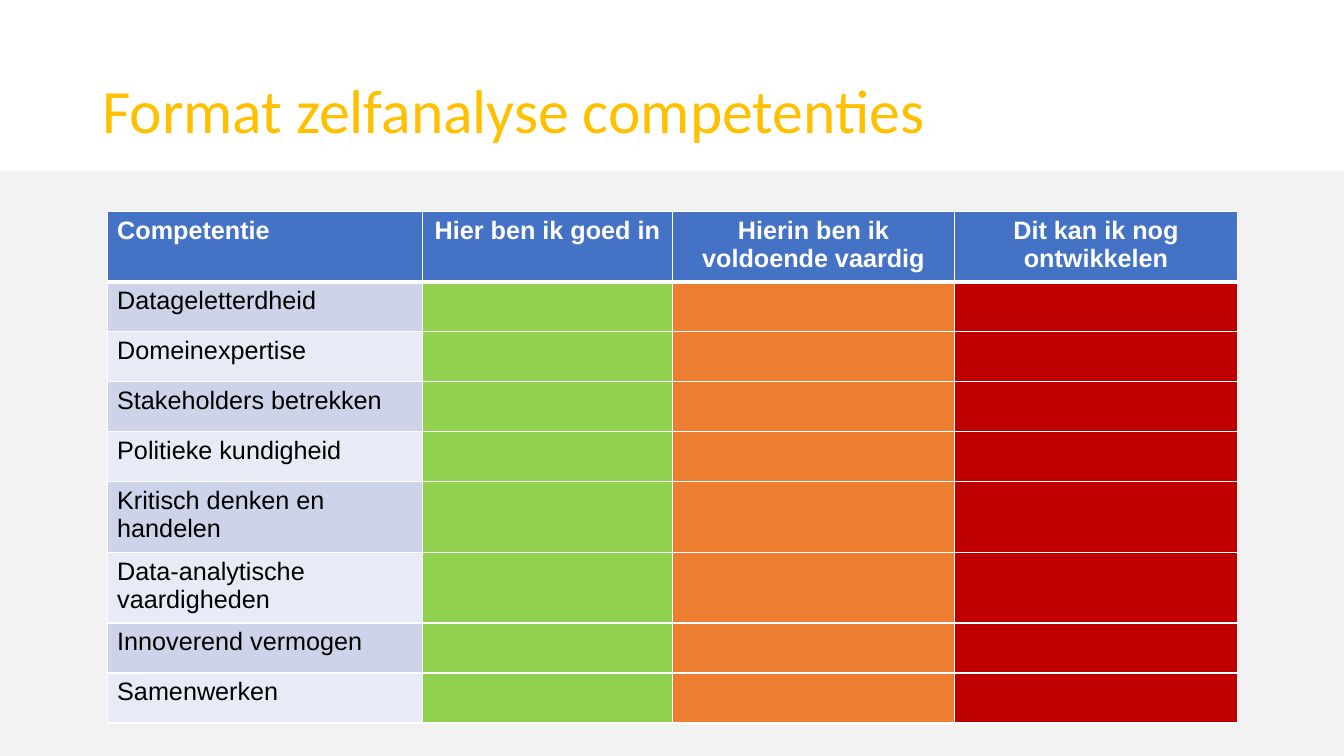
from lxml import etree
from pptx import Presentation
from pptx import util as u
from pptx.dml.color import RGBColor
from pptx.enum import shapes, text
from pptx.oxml import ns

WHITE = RGBColor(0xFF, 0xFF, 0xFF)
BLACK = RGBColor(0x00, 0x00, 0x00)
GREY = RGBColor(0xF2, 0xF2, 0xF2)
YELLOW = RGBColor(0xFF, 0xC0, 0x00)
BLUE = RGBColor(0x44, 0x72, 0xC4)
BANDS = RGBColor(0xCD, 0xD4, 0xEA), RGBColor(0xE8, 0xEB, 0xF5)
RATINGS = (RGBColor(0x92, 0xD0, 0x50), RGBColor(0xED, 0x7D, 0x31),
           RGBColor(0xC0, 0x00, 0x00))

HEADERS = ("Competentie", "Hier ben ik goed in",
           "Hierin ben ik voldoende vaardig", "Dit kan ik nog ontwikkelen")
COMPETENCES = (
    "Datageletterdheid", "Domeinexpertise", "Stakeholders betrekken",
    "Politieke kundigheid", "Kritisch denken en handelen",
    "Data-analytische vaardigheden", "Innoverend vermogen", "Samenwerken")
COLUMN_WIDTHS = 7.95, 6.29, 7.12, 7.12
ROW_HEIGHT = 1.26


def write(tf, words, font="Arial", size=18, color=BLACK, bold=False,
          align=text.PP_ALIGN.LEFT, spacing=1.0):
    p = tf.paragraphs[0]
    p.alignment = align
    p.line_spacing = spacing
    r = p.add_run()
    r.text = words
    r.font.name = font
    r.font.size = u.Pt(size)
    r.font.bold = bold
    r.font.color.rgb = color


def set_borders(cell, **widths):
    """Draw white cell borders; widths in points, keyed L, R, T, B."""
    tc_pr = cell._tc.get_or_add_tcPr()
    for side, width in widths.items():
        ln = etree.SubElement(tc_pr, ns.qn(f"a:ln{side}"), w=str(u.Pt(width)))
        fill = etree.SubElement(ln, ns.qn("a:solidFill"))
        etree.SubElement(fill, ns.qn("a:srgbClr"), val=str(WHITE))


class SlideBuilder:
    def __init__(self, slide):
        self.slide = slide

    def panel(self, x, y, w, h, color):
        sp = self.slide.shapes.add_shape(
            shapes.MSO_SHAPE.RECTANGLE, u.Cm(x), u.Cm(y), u.Cm(w), u.Cm(h))
        sp.shadow.inherit = False
        sp.fill.solid()
        sp.fill.fore_color.rgb = color
        sp.line.fill.background()

    def title(self, x, y, w, h, words):
        sp = self.slide.shapes.add_textbox(u.Cm(x), u.Cm(y), u.Cm(w), u.Cm(h))
        tf = sp.text_frame
        tf.word_wrap = True
        tf.vertical_anchor = text.MSO_ANCHOR.MIDDLE
        write(tf, words, font="Calibri", size=44, color=YELLOW, spacing=0.9)

    def cell(self, cell, fill, words="", top=1, bottom=1, **style):
        set_borders(cell, L=1, R=1, T=top, B=bottom)
        cell.fill.solid()
        cell.fill.fore_color.rgb = fill
        if words:
            write(cell.text_frame, words, **style)

    def competence_table(self, x, y):
        rows = len(COMPETENCES) + 1
        table = self.slide.shapes.add_table(
            rows, len(HEADERS), u.Cm(x), u.Cm(y),
            u.Cm(sum(COLUMN_WIDTHS)), u.Cm(rows * ROW_HEIGHT)).table
        table.horz_banding = False
        for column, width in zip(table.columns, COLUMN_WIDTHS):
            column.width = u.Cm(width)
        for row in table.rows:
            row.height = u.Cm(ROW_HEIGHT)

        for col, header in enumerate(HEADERS):
            align = text.PP_ALIGN.CENTER if col else text.PP_ALIGN.LEFT
            self.cell(table.cell(0, col), BLUE, header, bottom=3,
                      color=WHITE, bold=True, align=align)
        for row, competence in enumerate(COMPETENCES, 1):
            top = 3 if row == 1 else 1
            self.cell(table.cell(row, 0), BANDS[(row - 1) % 2], competence,
                      top=top)
            for col, color in enumerate(RATINGS, 1):
                self.cell(table.cell(row, col), color, top=top)


def main():
    prs = Presentation()
    prs.slide_width, prs.slide_height = u.Cm(33.87), u.Cm(19.05)
    s = SlideBuilder(prs.slides.add_slide(prs.slide_layouts[6]))
    s.panel(0, 4.3, 33.87, 14.75, GREY)
    s.title(2.33, 1.01, 29.21, 3.68, "Format zelfanalyse competenties")
    s.competence_table(2.7, 5.32)
    prs.save("out.pptx")


if __name__ == "__main__":
    main()
